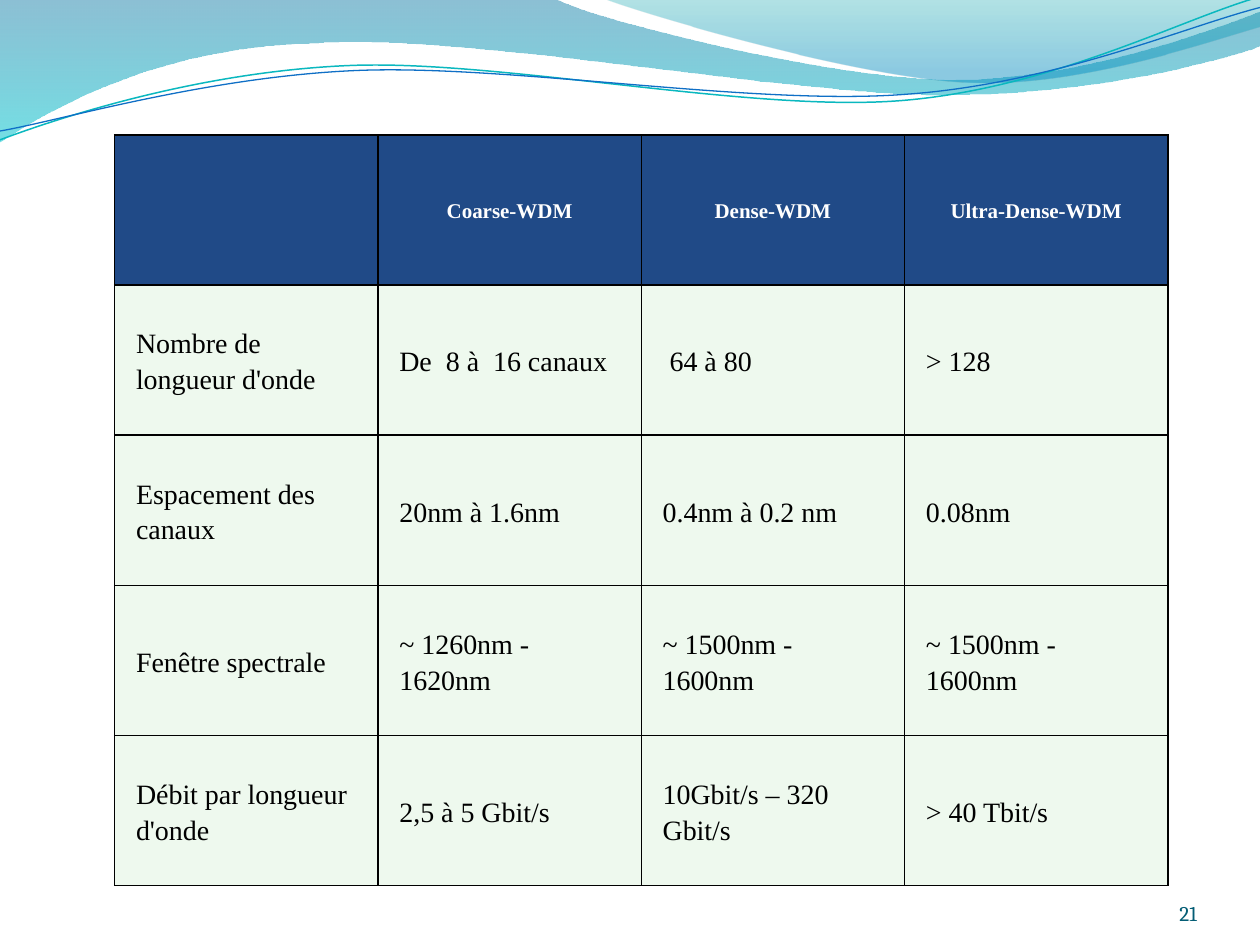
from dataclasses import dataclass
from math import cos, radians, sin

from lxml import etree
from pptx import Presentation
from pptx.dml.color import RGBColor
from pptx.enum.text import MSO_ANCHOR as Anchor, PP_ALIGN as Align
from pptx.oxml.ns import qn
from pptx.util import Inches, Pt


@dataclass(frozen=True)
class Theme:
    header: str = "204A87"
    body: str = "EEF9EE"
    white: str = "FFFFFF"
    ink: str = "000000"
    number: str = "045D75"
    teal_line: str = "0AB8BF"
    blue_line: str = "0F6FC6"
    # Gradient stops: position, colour, opacity (all percentages)
    main_wave: tuple = ((0, "0074A1", 45), (100, "00C6CF", 55))
    light_wave: tuple = ((0, "00A1A9", 30), (80, "008BBF", 45))
    table_font: str = "Times New Roman"
    number_font: str = "Cambria"
    small: int = 12
    large: int = 16


THEME = Theme()
CURVE_TILT = 357.3

# Outlines: steps of one point (line) or three points (Bezier curve)
MAIN_WAVE = [
    [(0, 0)], [(4.4, -0.01)],
    [(4.76, 0.17), (6.64, 0.63), (7.58, 0.63)],
    [(8.53, 0.63), (9.58, 0.26), (10, 0.09)],
    [(10.01, 0.36)],
    [(9.83, 0.44), (8.7, 0.76), (7.46, 0.75)],
    [(6.22, 0.75), (3.82, 0.28), (2.57, 0.34)],
    [(1.29, 0.36), (0.46, 0.83), (-0.01, 1.13)],
    [(0, 0)],
]
LIGHT_WAVE = [
    [(4.79, -0.01)],
    [(5.09, 0.11), (6.82, 0.62), (7.69, 0.65)],
    [(8.56, 0.69), (9.61, 0.32), (10, 0.21)],
    [(10, 0)], [(4.79, -0.01)],
]
TEAL_CURVE = [
    [(0, 1.11)],
    [(0.48, 0.93), (1.58, 0.57), (2.77, 0.52)],
    [(3.95, 0.47), (5.93, 0.89), (7.13, 0.8)],
    [(8.33, 0.71), (9.38, 0.15), (9.98, -0.02)],
]
BLUE_CURVE = [
    [(0, 1.04)],
    [(0.47, 0.96), (1.64, 0.61), (2.83, 0.56)],
    [(4.03, 0.51), (5.97, 0.84), (7.17, 0.75)],
    [(8.36, 0.67), (9.41, 0.21), (10, 0.06)],
]

ROWS = [
    ["", "Coarse-WDM", "Dense-WDM", "Ultra-Dense-WDM"],
    ["Nombre de longueur d'onde", "De  8 à  16 canaux", " 64 à 80", "> 128"],
    ["Espacement des canaux", "20nm à 1.6nm", "0.4nm à 0.2 nm", "0.08nm"],
    ["Fenêtre spectrale", "~ 1260nm - 1620nm", "~ 1500nm - 1600nm", "~ 1500nm - 1600nm"],
    ["Débit par longueur d'onde", "2,5 à 5 Gbit/s", "10Gbit/s – 320 Gbit/s", "> 40 Tbit/s"],
]


def rgb(value):
    return RGBColor.from_string(value)


def add_span(para, text, font, size, color, bold=False):
    span = para.add_run()
    span.text = text
    span.font.name = font
    span.font.size = Pt(size)
    span.font.bold = bold
    span.font.color.rgb = rgb(color)


def add_outline(shapes, outline, left, top, closed):
    steps = [[(left + Inches(x), top + Inches(y)) for x, y in step] for step in outline]
    points = [point for step in steps for point in step]
    builder = shapes.build_freeform(*points[0], scale=1.0)
    builder.add_line_segments(points[1:], close=closed)
    shape = builder.convert_to_shape()
    shape.shadow.inherit = False
    shape.fill.background()
    # Redraw the straight segments as true Bezier curves
    track = next(shape.element.iter(qn("a:path")))
    for child in list(track):
        track.remove(child)
    for index, step in enumerate(steps):
        kind = "cubicBezTo" if len(step) == 3 else "lnTo" if index else "moveTo"
        command = etree.SubElement(track, qn(f"a:{kind}"))
        for x, y in step:
            etree.SubElement(command, qn("a:pt"),
                             x=str(int(x - shape.left)), y=str(int(y - shape.top)))
    if closed:
        etree.SubElement(track, qn("a:close"))
    return shape


def add_wave(page, outline, left, top, stops):
    shape = add_outline(page.shapes, outline, left, top, True)
    shape.line.fill.background()
    # Vertical gradient with transparent stops
    gradient = etree.Element(qn("a:gradFill"), rotWithShape="1")
    stop_list = etree.SubElement(gradient, qn("a:gsLst"))
    for position, color, opacity in stops:
        stop = etree.SubElement(stop_list, qn("a:gs"), pos=str(position * 1000))
        tint = etree.SubElement(stop, qn("a:srgbClr"), val=color)
        etree.SubElement(tint, qn("a:alpha"), val=str(opacity * 1000))
    etree.SubElement(gradient, qn("a:lin"), ang="5400000", scaled="0")
    properties = shape.element.spPr
    properties.replace(properties.find(qn("a:noFill")), gradient)


def level(outline, center):
    """Turn an outline back by the tilt that its shape will receive."""
    turn = radians(360 - CURVE_TILT)
    middle_x, middle_y = center

    def turned(x, y):
        across, down = x - middle_x, y - middle_y
        return (middle_x + across * cos(turn) - down * sin(turn),
                middle_y + across * sin(turn) + down * cos(turn))

    return [[turned(*point) for point in step] for step in outline]


def add_curve(group, outline, center, left, top, color, width):
    shape = add_outline(group.shapes, level(outline, center), left, top, False)
    shape.rotation = CURVE_TILT
    shape.line.color.rgb = rgb(color)
    shape.line.width = Pt(width)


def add_banner(page, left, top):
    add_wave(page, MAIN_WAVE, left, top, THEME.main_wave)
    add_wave(page, LIGHT_WAVE, left, top, THEME.light_wave)
    group = page.shapes.add_group_shape()
    add_curve(group, TEAL_CURVE, (4.99, 0.57), left, top, THEME.teal_line, 0.85)
    add_curve(group, BLUE_CURVE, (5, 0.59), left, top, THEME.blue_line, 0.75)


def add_borders(cell):
    properties = cell._tc.get_or_add_tcPr()
    for side in ("lnL", "lnR", "lnT", "lnB"):
        line = etree.SubElement(properties, qn(f"a:{side}"), w=str(Pt(1)))
        fill = etree.SubElement(line, qn("a:solidFill"))
        etree.SubElement(fill, qn("a:srgbClr"), val=THEME.ink)


def fill_cell(cell, text, is_header):
    add_borders(cell)
    cell.fill.solid()
    cell.fill.fore_color.rgb = rgb(THEME.header if is_header else THEME.body)
    cell.vertical_anchor = Anchor.MIDDLE
    cell.margin_left = cell.margin_right = Inches(0.17)
    cell.margin_top = cell.margin_bottom = Inches(0.03)
    if not text:
        return
    para = cell.text_frame.paragraphs[0]
    para.line_spacing = 1.15
    para.alignment = Align.CENTER if is_header else Align.LEFT
    add_span(para, text, THEME.table_font,
             THEME.small if is_header else THEME.large,
             THEME.white if is_header else THEME.ink, is_header)


def add_comparison(page, left, top, width, height):
    frame = page.shapes.add_table(len(ROWS), len(ROWS[0]), left, top, width, height)
    for row_index, row in enumerate(ROWS):
        for column_index, text in enumerate(row):
            fill_cell(frame.table.cell(row_index, column_index), text, row_index == 0)


def add_page_number(page, left, top, width, height):
    frame = page.shapes.add_textbox(left, top, width, height).text_frame
    frame.word_wrap = True
    frame.vertical_anchor = Anchor.BOTTOM
    frame.margin_left = frame.margin_right = frame.margin_top = frame.margin_bottom = 0
    para = frame.paragraphs[0]
    para.alignment = Align.RIGHT
    add_span(para, "21", THEME.number_font, THEME.small, THEME.number)


def main():
    deck = Presentation()
    deck.slide_width, deck.slide_height = Inches(10), Inches(7.5)
    page = deck.slides.add_slide(deck.slide_layouts[6])
    add_banner(page, Inches(0), Inches(0))
    add_page_number(page, Inches(8.67), Inches(6.95), Inches(0.83), Inches(0.4))
    add_comparison(page, Inches(0.91), Inches(1.07), Inches(8.36), Inches(5.96))
    deck.save("out.pptx")


if __name__ == "__main__":
    main()
